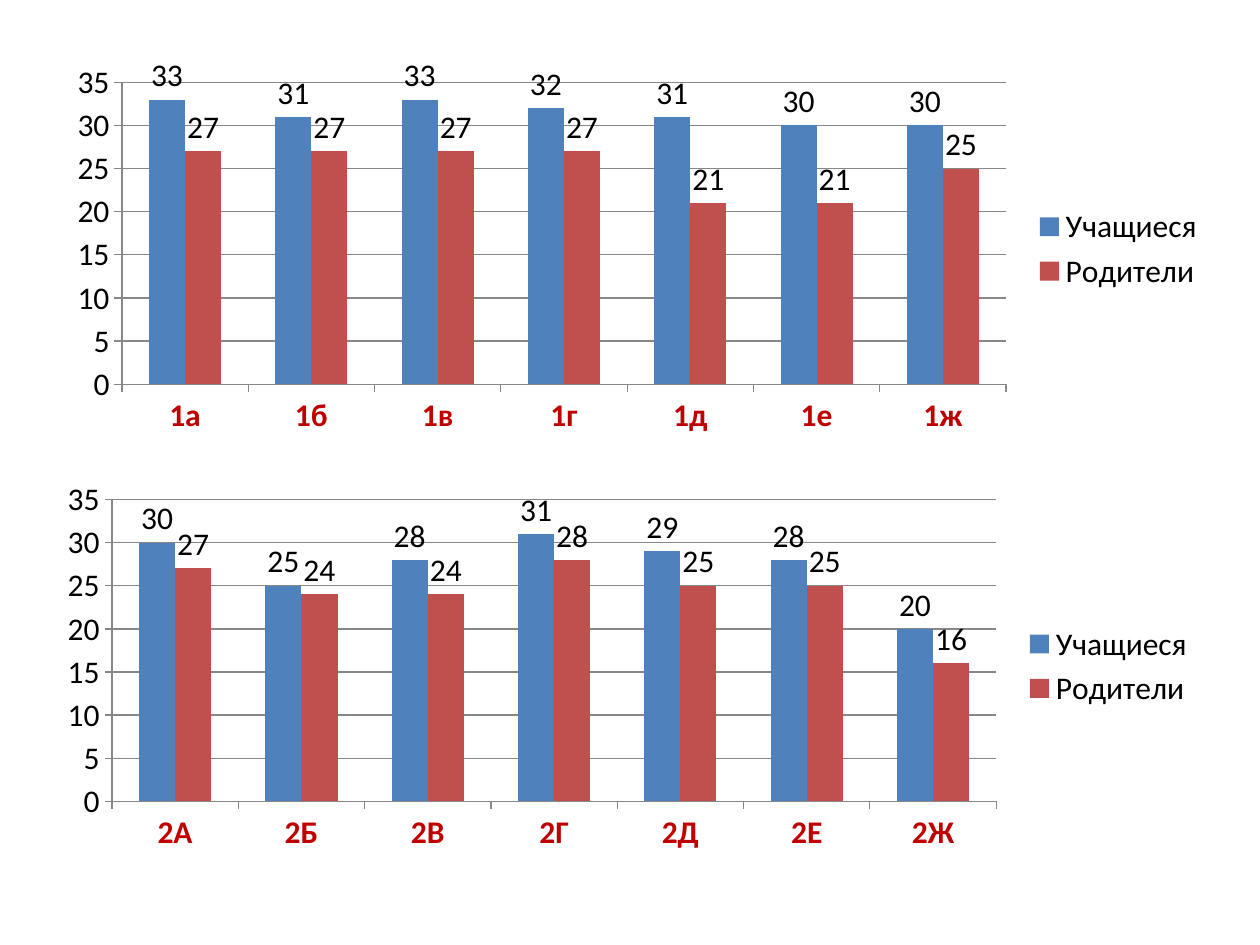
"""Build a slide with two charts of pupils and parents by class."""
from dataclasses import dataclass

import pptx
import pptx.chart.data
import pptx.dml.color
import pptx.enum.chart
import pptx.util
from pptx.util import Cm

GRAY = "878787"
HUES = ("4F81BD", "C0504D", "9BBB59")
NAMES = ("Учащиеся ", "Родители", "Столбец2")


@dataclass
class Panel:
    """Place and values of one chart."""
    left: float
    top: float
    cats: list[str]
    rows: tuple[list[int], list[int], list[int]]


PANELS = [
    Panel(1.09, 1.12, ["1а", "1б", "1в", "1г", "1д", "1е", "1ж"],
          ([33, 31, 33, 32, 31, 30, 30], [27, 27, 27, 27, 21, 21, 25], [])),
    Panel(0.89, 9.53, ["2А", "2Б", "2В", "2Г", "2Д", "2Е", "2Ж"],
          ([30, 25, 28, 31, 29, 28, 20], [27, 24, 24, 28, 25, 25, 16], [])),
]


def paint(part, color: str) -> None:
    """Give a fill a solid colour."""
    part.solid()
    part.fore_color.rgb = pptx.dml.color.RGBColor.from_string(color)


def style(font, color: str, bold: bool = False) -> None:
    """Set the face, size, weight and colour of a font."""
    font.name = "Calibri"
    font.size = pptx.util.Pt(18)
    font.bold = bold
    paint(font.fill, color)


def rule(line) -> None:
    """Draw a thin gray line."""
    line.width = pptx.util.Pt(0.75)
    paint(line.fill, GRAY)


def draw(slide, panel: Panel) -> None:
    """Add one clustered column chart."""
    enum = pptx.enum.chart
    data = pptx.chart.data.CategoryChartData()
    data.categories = panel.cats
    for name, row in zip(NAMES, panel.rows):
        data.add_series(name, row)
    chart = slide.shapes.add_chart(
        enum.XL_CHART_TYPE.COLUMN_CLUSTERED, Cm(panel.left), Cm(panel.top),
        Cm(23.6), Cm(7.8), data).chart
    style(chart.font, "000000")
    chart.has_title = False
    chart.has_legend = True
    chart.legend.position = enum.XL_LEGEND_POSITION.RIGHT
    chart.legend.include_in_layout = False

    for axis in (chart.category_axis, chart.value_axis):
        axis.major_tick_mark = enum.XL_TICK_MARK.OUTSIDE
        rule(axis.format.line)
    style(chart.category_axis.tick_labels.font, "C00000", True)
    scale = chart.value_axis
    scale.minimum_scale, scale.maximum_scale, scale.major_unit = 0, 35, 5
    scale.has_major_gridlines = True
    rule(scale.major_gridlines.format.line)

    plot = chart.plots[0]
    plot.gap_width = 150
    plot.overlap = 0
    plot.vary_by_categories = False
    for bars, hue, row in zip(plot.series, HUES, panel.rows):
        paint(bars.format.fill, hue)
        if row:
            labels = bars.data_labels
            labels.show_value = True
            labels.position = enum.XL_LABEL_POSITION.OUTSIDE_END
            style(labels.font, "000000")


def main() -> None:
    """Create and save the slide."""
    deck = pptx.Presentation()
    deck.slide_width, deck.slide_height = Cm(25.4), Cm(19.05)
    slide = deck.slides.add_slide(deck.slide_layouts[6])
    for panel in PANELS:
        draw(slide, panel)
    deck.save("out.pptx")


if __name__ == "__main__":
    main()
